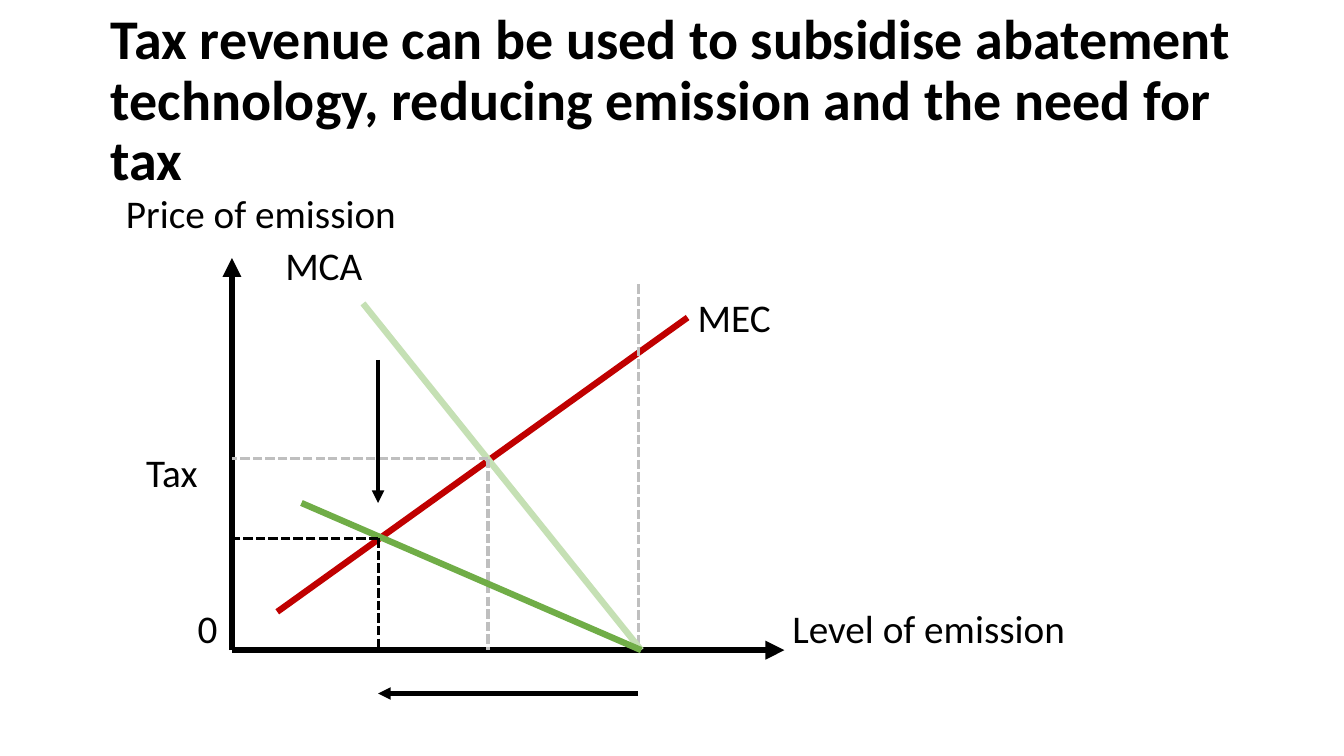
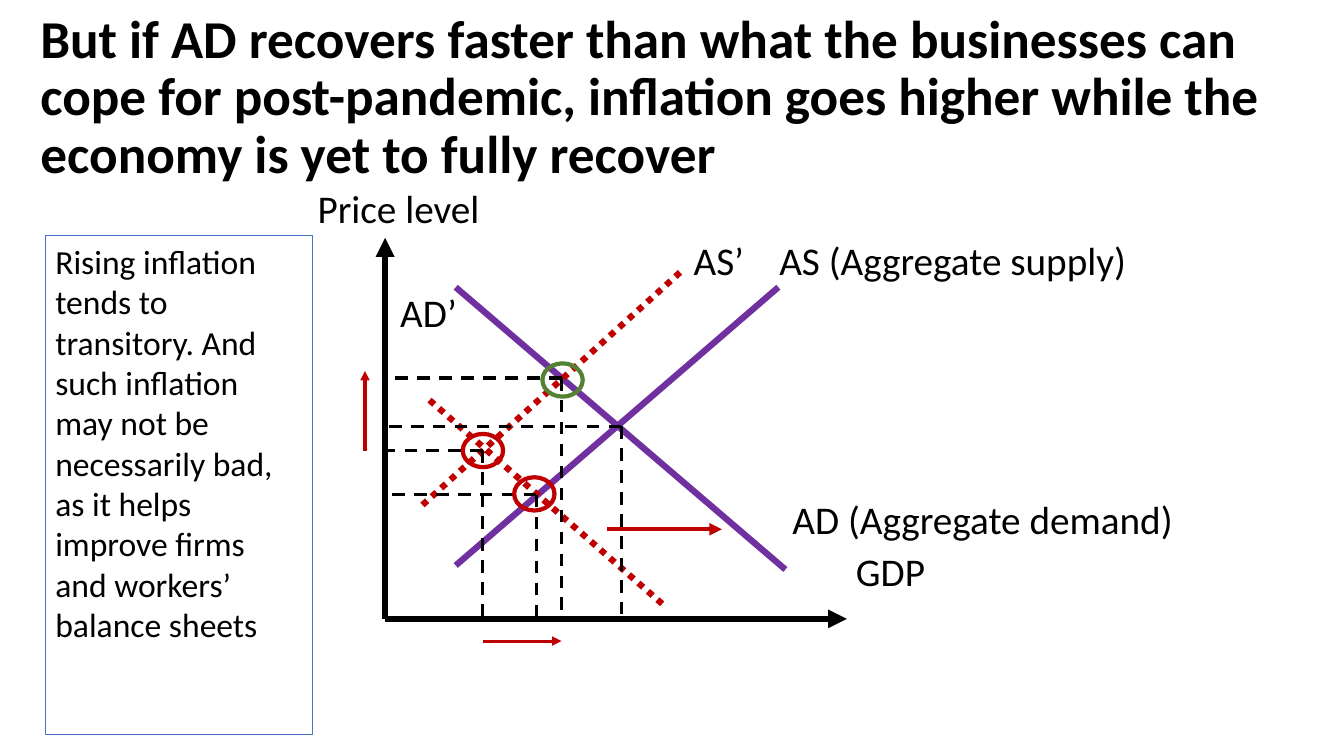
from dataclasses import dataclass

from lxml.etree import SubElement
from pptx import Presentation
from pptx.dml.color import RGBColor
from pptx.enum.dml import MSO_LINE as Dash
from pptx.enum.shapes import MSO_CONNECTOR as Connector, MSO_SHAPE as Shape
from pptx.enum.text import MSO_ANCHOR as Anchor, MSO_AUTO_SIZE as AutoSize, PP_ALIGN as Align
from pptx.oxml.ns import qn
from pptx.util import Emu, Pt

EMU_PER_PX = 9144  # 100 px to the inch


@dataclass(frozen=True)
class Theme:
    font: str = "Calibri"
    black: str = "000000"
    red: str = "C00000"
    grey: str = "BFBFBF"
    light_green: str = "C5E0B4"
    green: str = "70AD47"
    dark_green: str = "548235"
    purple: str = "7030A0"
    blue: str = "4472C4"
    label_size: int = 28
    note_size: int = 24
    curve_width: float = 4.5
    mark_width: float = 3
    guide_width: float = 2.25
    note_width: float = 0.75


THEME = Theme()
LABEL_HEIGHT = 48
LABEL_PITCH = 51.5
RING_SIZE = (40, 33)


def px(value):
    return Emu(round(value * EMU_PER_PX))


def place(left, top, width, height):
    return px(left), px(top), px(width), px(height)


def style_line(line, color, width):
    line.color.rgb = RGBColor.from_string(color)
    line.width = Pt(width)


# Text
def write(frame, text, size, anchor, bold=False):
    frame.word_wrap = True
    frame.auto_size = AutoSize.NONE
    frame.vertical_anchor = anchor
    paragraph = frame.paragraphs[0]
    paragraph.text = text
    paragraph.alignment = Align.LEFT
    font = paragraph.font
    font.name, font.size, font.bold = THEME.font, Pt(size), bold
    font.color.rgb = RGBColor.from_string(THEME.black)
    return paragraph


def add_titled_slide(presentation, text, box, size):
    slide = presentation.slides.add_slide(presentation.slide_layouts[5])
    title = slide.shapes.title
    title.left, title.top, title.width, title.height = place(*box)
    paragraph = write(title.text_frame, text, size, Anchor.MIDDLE, bold=True)
    paragraph.line_spacing = 0.9
    return slide


def add_labels(slide, first_center, labels):
    """Place labels on evenly spaced rows: (row, left, width, text)."""
    for row, left, width, text in labels:
        top = first_center + row * LABEL_PITCH - LABEL_HEIGHT / 2
        label = slide.shapes.add_textbox(*place(left, top, width, LABEL_HEIGHT))
        frame = label.text_frame
        frame.margin_left = frame.margin_right = 0
        frame.margin_top = frame.margin_bottom = 0
        write(frame, text, THEME.label_size, Anchor.MIDDLE)


def add_outline(slide, kind, box, color, width):
    shape = slide.shapes.add_shape(kind, *place(*box))
    shape.shadow.inherit = False
    shape.fill.background()
    style_line(shape.line, color, width)
    return shape


def add_note(slide, box, text):
    note = add_outline(slide, Shape.RECTANGLE, box, THEME.blue, THEME.note_width)
    write(note.text_frame, text, THEME.note_size, Anchor.TOP)


# Diagram parts
def add_line(slide, start, end, color, width=THEME.curve_width, dash=None, arrow=False):
    connector = slide.shapes.add_connector(
        Connector.STRAIGHT, px(start[0]), px(start[1]), px(end[0]), px(end[1]))
    style_line(connector.line, color, width)
    if dash is not None:
        connector.line.dash_style = dash
    properties = connector._element.spPr
    if arrow:
        SubElement(properties.find(qn("a:ln")), qn("a:tailEnd"), type="triangle")
    SubElement(properties, qn("a:effectLst"))


def add_axes(slide, origin, top, right):
    for end in ((origin[0], top), (right, origin[1])):
        add_line(slide, origin, end, THEME.black, arrow=True)


def add_guides(slide, point, origin, color, dash):
    """Drop dashed lines from a point to both axes."""
    for end in ((origin[0], point[1]), (point[0], origin[1])):
        add_line(slide, point, end, color, THEME.guide_width, dash)


def add_ring(slide, center, color):
    width, height = RING_SIZE
    box = (center[0] - width / 2, center[1] - height / 2, width, height)
    add_outline(slide, Shape.OVAL, box, color, THEME.mark_width)


# Slides
def build_emission_slide(presentation):
    slide = add_titled_slide(
        presentation,
        "Tax revenue can be used to subsidise abatement technology, "
        "reducing emission and the need for tax",
        (100, 29, 1155, 145), 40)
    add_labels(slide, 211, [
        (0, 125, 300, "Price of emission"),
        (1, 283, 90, "MCA"),
        (2, 692, 90, "MEC"),
        (5, 145, 70, "Tax"),
        (8, 196, 30, "0"),
        (8, 786, 300, "Level of emission"),
    ])
    origin, untaxed = (230, 645), (636, 645)
    add_axes(slide, origin, 256, 778)
    add_line(slide, (275, 607), (682, 315), THEME.red)
    add_line(slide, (633, 282), (633, 644), THEME.grey, THEME.guide_width, Dash.SQUARE_DOT)
    add_line(slide, untaxed, (360, 301), THEME.light_green)
    add_guides(slide, (484, 455), origin, THEME.grey, Dash.SQUARE_DOT)
    add_line(slide, untaxed, (299, 499), THEME.green)
    add_guides(slide, (375, 534), origin, THEME.black, Dash.SQUARE_DOT)
    for start, end in (((633, 688), (375, 688)), ((375, 357), (375, 499))):
        add_line(slide, start, end, THEME.black, THEME.mark_width, arrow=True)


def build_inflation_slide(presentation):
    slide = add_titled_slide(
        presentation,
        "But if AD recovers faster than what the businesses can cope for post-pandemic, "
        "inflation goes higher while the economy is yet to fully recover",
        (30, 12, 1276, 172), 38)
    add_labels(slide, 206, [
        (0, 315, 190, "Price level"),
        (1, 688, 70, "AS’"),
        (1, 773, 380, "AS (Aggregate supply)"),
        (2, 397, 80, "AD’"),
        (6, 786, 410, "AD (Aggregate demand)"),
        (7, 849, 90, "GDP"),
    ])
    add_note(
        slide, (45, 234, 265, 495),
        "Rising inflation tends to transitory. And such inflation may not be "
        "necessarily bad, as it helps improve firms and workers’ balance sheets")
    origin = (382, 614)
    add_axes(slide, origin, 236, 840)
    # Original and shifted curves
    for start, end in (((452, 561), (772, 285)), ((452, 285), (779, 565))):
        add_line(slide, start, end, THEME.purple)
    for start, end in (((426, 397), (659, 601)), ((419, 501), (677, 268))):
        add_line(slide, start, end, THEME.red, dash=Dash.ROUND_DOT)
    # Equilibria
    for point in ((616, 423), (532, 491), (479, 447), (557, 375)):
        add_guides(slide, point, origin, THEME.black, Dash.DASH)
    for center, color in (((530, 490), THEME.red), ((479, 447), THEME.red),
                          ((558, 377), THEME.dark_green)):
        add_ring(slide, center, color)
    # Directions of change
    for start, end, width in (((602, 525), (716, 525), THEME.mark_width),
                              ((479, 636), (557, 636), THEME.guide_width),
                              ((362, 447), (362, 368), THEME.guide_width)):
        add_line(slide, start, end, THEME.red, width, arrow=True)


def main():
    presentation = Presentation()
    presentation.slide_width, presentation.slide_height = px(1333), px(750)
    build_emission_slide(presentation)
    build_inflation_slide(presentation)
    presentation.save("out.pptx")


if __name__ == "__main__":
    main()
